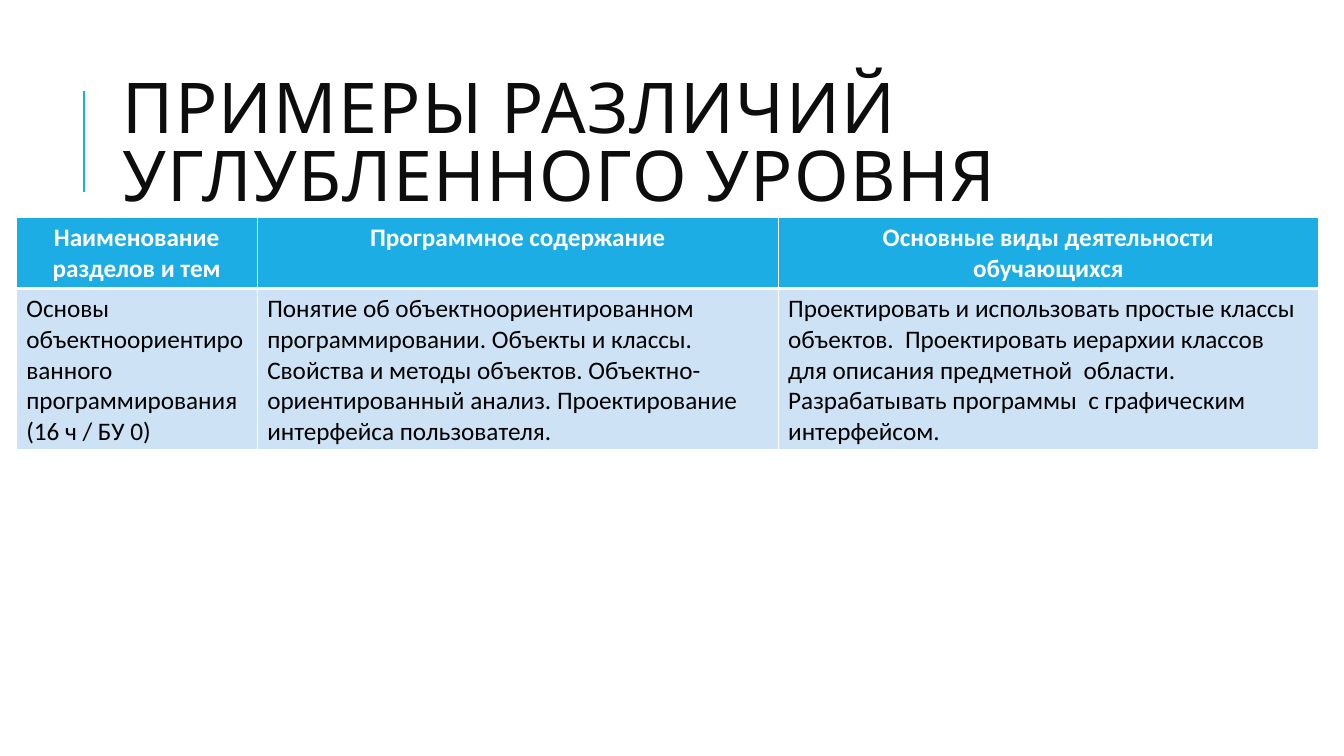
from lxml.etree import SubElement
from pptx import Presentation
from pptx.dml.color import RGBColor as Rgb
from pptx.enum.shapes import MSO_CONNECTOR as Connector
from pptx.enum.text import MSO_ANCHOR as Anchor, PP_ALIGN as Align
from pptx.oxml.ns import qn
from pptx.util import Cm, Pt

COLORS = {
    "accent": "1CADE4",
    "title": "0D0D0D",
    "band": "CDE3F5",
    "white": "FFFFFF",
    "black": "000000",
}
TITLE = "ПРИМЕРЫ РАЗЛИЧИЙ УГЛУБЛЕННОГО УРОВНЯ"
HEADINGS = [
    "Наименование\nразделов и тем",
    "Программное содержание",
    "Основные виды деятельности\nобучающихся",
]
TOPIC = [
    "Основы объектноориентированного программирования\n(16 ч / БУ 0)",
    "Понятие об объектноориентированном программировании. Объекты и классы. "
    "Свойства и методы объектов. Объектно-ориентированный анализ. "
    "Проектирование интерфейса пользователя.",
    "Проектировать и использовать простые классы объектов.  Проектировать "
    "иерархии классов  для описания предметной  области. Разрабатывать "
    "программы  с графическим интерфейсом.",
]
COLUMN_SHARES = [0.185, 0.4, 0.415]
ROW_SHARES = [0.304, 0.696]


def color(key):
    return Rgb.from_string(COLORS[key])


def style_font(font, name, size, key, bold=False):
    font.name = name
    font.size = Pt(size)
    font.bold = bold
    font.color.rgb = color(key)


def add_heading(slide, left, top, width, height):
    rule_x = left - Cm(0.72)
    rule = slide.shapes.add_connector(
        Connector.STRAIGHT, rule_x, top + Cm(3.2), rule_x, top + Cm(0.66))
    rule.line.color.rgb = color("accent")
    rule.line.width = Pt(1.5)
    SubElement(rule._element.spPr, qn("a:effectLst"))

    heading = slide.shapes.add_textbox(left, top, width, height).text_frame
    heading.word_wrap = True
    heading.vertical_anchor = Anchor.MIDDLE
    heading.text = TITLE
    line = heading.paragraphs[0]
    line.line_spacing = 0.8
    style_font(line.font, "Cabin", 50, "title")
    line.runs[0].font._element.set("spc", "100")


def set_borders(cell, bottom_width):
    properties = cell._tc.get_or_add_tcPr()
    widths = {"a:lnL": 1, "a:lnR": 1, "a:lnT": 1, "a:lnB": bottom_width}
    for position, (side, width) in enumerate(widths.items()):
        border = SubElement(properties, qn(side), w=str(Pt(width)))
        fill = SubElement(border, qn("a:solidFill"))
        SubElement(fill, qn("a:srgbClr"), val=COLORS["white"])
        properties.insert(position, border)


def fill_row(cells, texts, fill, ink, bold, align, bottom_width):
    for cell, text in zip(cells, texts):
        cell.text = text
        cell.fill.solid()
        cell.fill.fore_color.rgb = color(fill)
        set_borders(cell, bottom_width)
        for paragraph in cell.text_frame.paragraphs:
            paragraph.alignment = align
            style_font(paragraph.font, "Calibri", 18, ink, bold)


def add_program(slide, left, top, width, height):
    program = slide.shapes.add_table(2, 3, left, top, width, height).table
    for column, share in zip(program.columns, COLUMN_SHARES):
        column.width = int(width * share)
    for row, share in zip(program.rows, ROW_SHARES):
        row.height = int(height * share)
    header, topic = program.rows
    fill_row(header.cells, HEADINGS, "accent", "white", True, Align.CENTER, 3)
    fill_row(topic.cells, TOPIC, "band", "black", False, Align.LEFT, 1)


def main():
    deck = Presentation()
    deck.slide_width, deck.slide_height = Cm(33.87), Cm(19.05)
    slide = deck.slides.add_slide(deck.slide_layouts[6])
    add_heading(slide, Cm(2.84), Cm(1.63), Cm(27), Cm(4.17))
    add_program(slide, Cm(0.41), Cm(5.49), Cm(32.82), Cm(5.84))
    deck.save("out.pptx")


if __name__ == "__main__":
    main()
